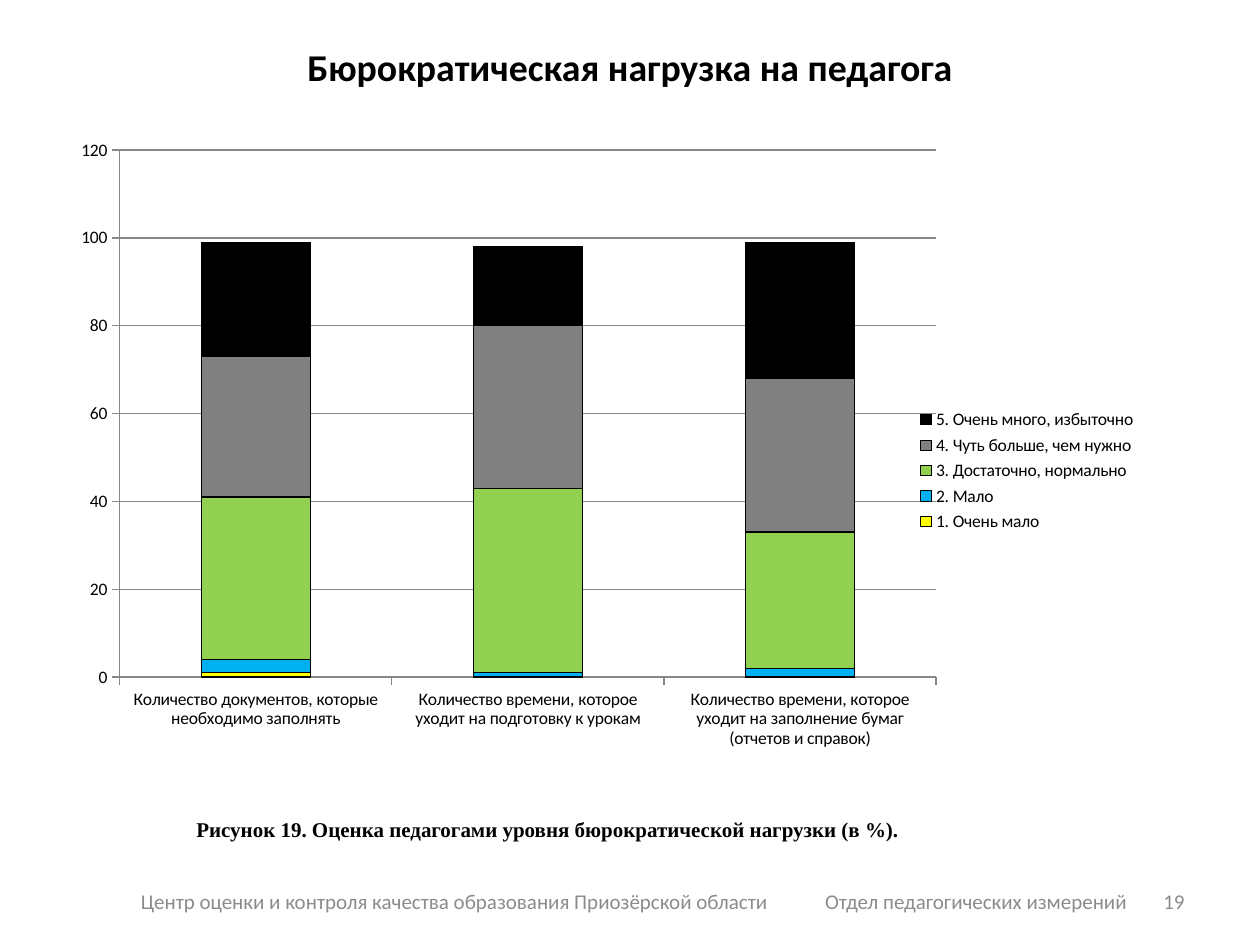
from lxml import etree
from pptx import Presentation
from pptx.chart.data import CategoryChartData
from pptx.dml.color import RGBColor
from pptx.enum.chart import XL_CHART_TYPE, XL_LEGEND_POSITION, XL_TICK_MARK
from pptx.enum.text import MSO_ANCHOR, PP_ALIGN
from pptx.oxml.ns import qn
from pptx.util import Inches, Pt

LEFT, CENTER, RIGHT = PP_ALIGN.LEFT, PP_ALIGN.CENTER, PP_ALIGN.RIGHT
MIDDLE = MSO_ANCHOR.MIDDLE
OUTSIDE = XL_TICK_MARK.OUTSIDE

# Content
COLORS = {"black": "000000", "footer": "8C8C8C", "axis": "868686", "yellow": "FFFF00",
          "blue": "00B0F0", "green": "92D050", "gray": "808080"}
TITLE = "Бюрократическая нагрузка на педагога"
CAPTION = "Рисунок 19. Оценка педагогами уровня бюрократической нагрузки (в %)."
CATEGORIES = [
    "Количество документов, которые необходимо заполнять",
    "Количество времени, которое уходит на подготовку к урокам",
    "Количество времени, которое уходит на заполнение бумаг (отчетов и справок)",
]
SERIES = [  # name, values, colour
    ("1. Очень мало", (1, 0, 0), "yellow"),
    ("2. Мало", (3, 1, 2), "blue"),
    ("3. Достаточно, нормально", (37, 42, 31), "green"),
    ("4. Чуть больше, чем нужно", (32, 37, 35), "gray"),
    ("5. Очень много, избыточно", (26, 18, 31), "black"),
]
FOOTERS = [  # text, left, width, alignment
    ("Центр оценки и контроля качества образования Приозёрской области", 1.02, 5.4, LEFT),
    ("Отдел педагогических измерений", 6.45, 2.65, LEFT),
    ("19", 9, 0.5, RIGHT),
]
# Shares of the chart area: x, y, w, h
PLOT_BOX = (0.05, 0.04, 0.72, 0.83)
LEGEND_BOX = (0.75, 0.44, 0.2, 0.21)


def rgb(name):
    return RGBColor.from_string(COLORS[name])


def write(shape, box, text, size, font, color, align, bold=False):
    shape.left, shape.top, shape.width, shape.height = map(Inches, box)
    tf = shape.text_frame
    tf.word_wrap = True
    tf.vertical_anchor = MIDDLE
    p = tf.paragraphs[0]
    p.alignment = align
    r = p.add_run()
    r.text = text
    r.font.size, r.font.name, r.font.bold = Pt(size), font, bold
    r.font.color.rgb = rgb(color)


def add_text(s, box, *style):
    write(s.shapes.add_textbox(0, 0, 0, 0), box, *style)


def place(element, box, inner=False):
    """Give a plot area or legend a manual layout."""
    for old in element.findall(qn("c:layout")):
        element.remove(old)
    layout = etree.Element(qn("c:layout"))
    manual = etree.SubElement(layout, qn("c:manualLayout"))
    settings = [("layoutTarget", "inner")] if inner else []
    settings += [("xMode", "edge"), ("yMode", "edge"), *zip("xywh", box)]
    for tag, value in settings:
        etree.SubElement(manual, qn("c:" + tag), val=str(value))
    position = element.find(qn("c:legendPos"))
    if position is None:
        element.insert(0, layout)
    else:
        position.addnext(layout)


def add_chart(s):
    data = CategoryChartData()
    data.categories = CATEGORIES
    for name, values, _ in SERIES:
        data.add_series(name, values)
    chart = s.shapes.add_chart(XL_CHART_TYPE.COLUMN_STACKED, Inches(0.5), Inches(0.99),
                               Inches(9), Inches(5.04), data).chart
    chart.has_title = False
    chart.font.size, chart.font.name = Pt(10), "Calibri"
    chart.font.color.rgb = rgb("black")

    # Columns
    plot = chart.plots[0]
    plot.gap_width, plot.overlap = 150, 100
    for series, (_, _, color) in zip(plot.series, SERIES):
        series.format.fill.solid()
        series.format.fill.fore_color.rgb = rgb(color)
        series.format.line.color.rgb = rgb("black")
        series.format.line.width = Pt(0.75)

    # Axes and gridlines
    value_axis = chart.value_axis
    value_axis.minimum_scale, value_axis.maximum_scale, value_axis.major_unit = 0, 120, 20
    value_axis.has_major_gridlines = True
    for axis in (chart.category_axis, value_axis):
        axis.major_tick_mark = OUTSIDE
    for part in (chart.category_axis, value_axis, value_axis.major_gridlines):
        part.format.line.color.rgb = rgb("axis")
        part.format.line.width = Pt(0.75)

    # Legend
    chart.has_legend = True
    chart.legend.position = XL_LEGEND_POSITION.RIGHT
    chart.legend.include_in_layout = False
    plot_area = chart.element.find(".//" + qn("c:plotArea"))
    place(plot_area, PLOT_BOX, inner=True)
    place(chart.element.find(".//" + qn("c:legend")), LEGEND_BOX)


def main():
    prs = Presentation()
    prs.slide_width, prs.slide_height = Inches(10), Inches(7.5)
    s = prs.slides.add_slide(prs.slide_layouts[5])
    write(s.shapes.title, (0.5, 0.3, 9, 0.46), TITLE, 21.6, "Calibri", "black", CENTER, True)
    add_chart(s)
    add_text(s, (1.46, 6.43, 5.83, 0.3), CAPTION, 12, "Times New Roman", "black", LEFT, True)
    # Footer
    for text, left, width, align in FOOTERS:
        add_text(s, (left, 6.95, width, 0.4), text, 12, "Calibri", "footer", align)
    prs.save("out.pptx")


if __name__ == "__main__":
    main()
